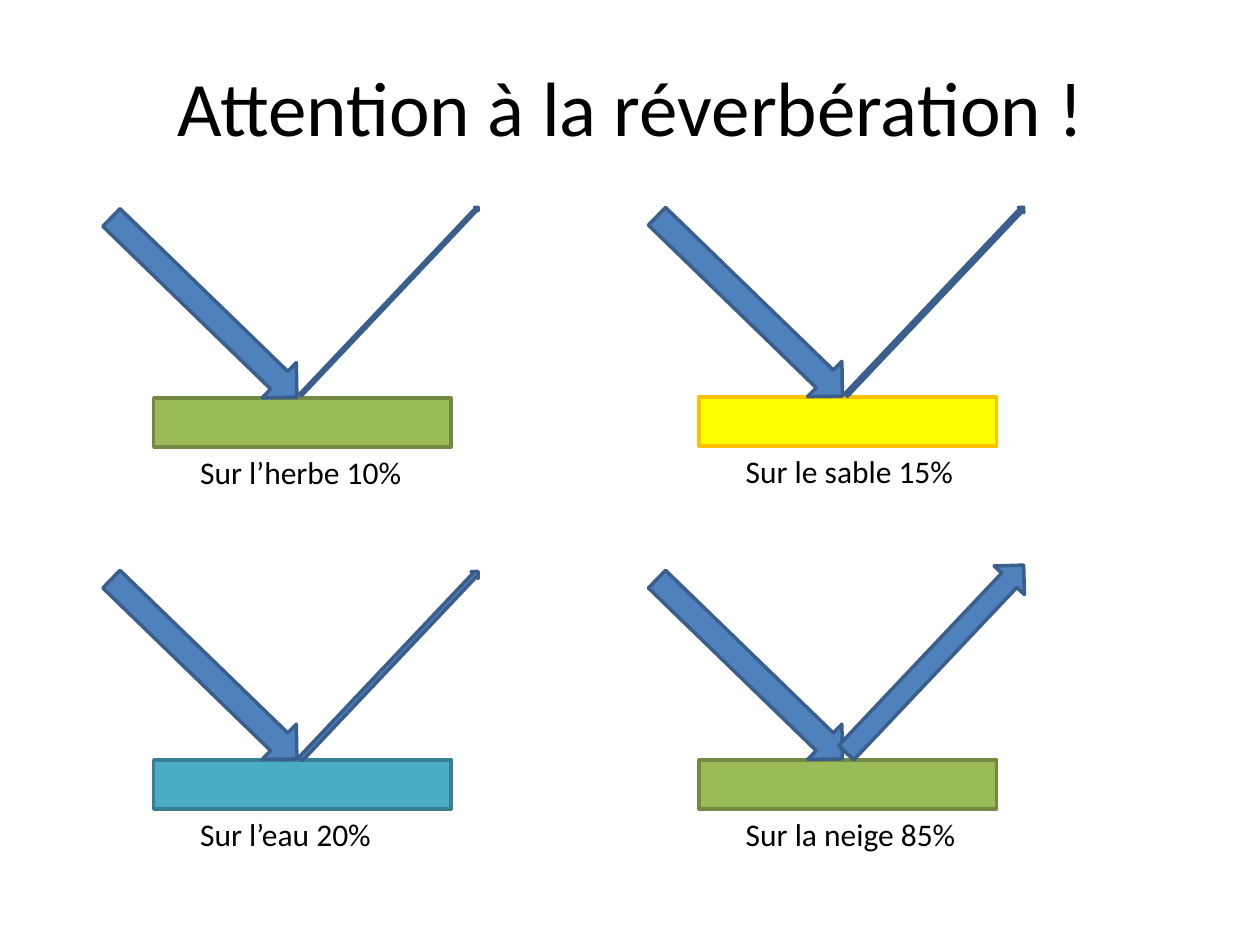
from pptx import Presentation
from pptx.dml.color import RGBColor
from pptx.enum.shapes import MSO_SHAPE as SHAPE
from pptx.enum.text import MSO_ANCHOR, MSO_AUTO_SIZE, PP_ALIGN
from pptx.util import Inches, Pt

TITLE = "Attention à la réverbération !"
FONT = "Calibri"
COLORS = {
    "text": "000000",
    "ray": "4F81BD", "ray_line": "3A5F8C",
    "green": "9BBB59", "green_line": "738A42",
    "yellow": "FFFF00", "yellow_line": "FFC000",
    "blue": "4BACC6", "blue_line": "377F92",
}

# name, reflected percent, ground colour, ground left and top,
# height of the reflected ray's centre above the ground, label width
SURFACES = [
    ("l’herbe", 10, "green", 1.22, 3.16, 0.77, 1.82),
    ("le sable", 15, "yellow", 5.55, 3.15, 0.76, 1.87),
    ("l’eau", 20, "blue", 1.22, 6.03, 0.75, 1.57),
    ("la neige", 85, "green", 5.55, 6.03, 0.8, 1.89),
]
GROUND_W, BAR_H = 2.36, 0.39
RAY_LENGTH = 2.05
INCOMING_X, REFLECTED_X = 0.4, 1.87  # ray centres from the ground's left
INCOMING_LIFT = 0.72
INCOMING_ANGLE, REFLECTED_ANGLE = 44.1, 313.4


def rgb(name):
    return RGBColor.from_string(COLORS[name])


def add_shape(slide, kind, color, x, y, w, h):
    s = slide.shapes.add_shape(kind, Inches(x), Inches(y), Inches(w), Inches(h))
    s.shadow.inherit = False
    s.fill.solid()
    s.fill.fore_color.rgb = rgb(color)
    s.line.color.rgb = rgb(color + "_line")
    s.line.width = Pt(2)
    return s


def add_ray(slide, center_x, center_y, thickness, angle):
    s = add_shape(slide, SHAPE.RIGHT_ARROW, "ray", center_x - RAY_LENGTH / 2,
                  center_y - thickness / 2, RAY_LENGTH, thickness)
    s.rotation = angle


def add_text(slide, text, size, x, y, w, h):
    tf = slide.shapes.add_textbox(
        Inches(x), Inches(y), Inches(w), Inches(h)).text_frame
    tf.text = text
    font = tf.paragraphs[0].runs[0].font
    font.name, font.size = FONT, Pt(size)
    font.color.rgb = rgb("text")
    return tf


def main():
    prs = Presentation()
    prs.slide_width, prs.slide_height = Inches(10), Inches(7.5)
    slide = prs.slides.add_slide(prs.slide_layouts[6])

    # Title
    tf = add_text(slide, TITLE, 44, 0.51, 0.21, 9, 1.25)
    tf.word_wrap = True
    tf.vertical_anchor = MSO_ANCHOR.MIDDLE
    tf.paragraphs[0].alignment = PP_ALIGN.CENTER

    # One diagram per surface; the reflected ray is as thick as its percentage
    for name, percent, color, x, y, lift, label_w in SURFACES:
        add_shape(slide, SHAPE.RECTANGLE, color, x, y, GROUND_W, BAR_H)
        add_ray(slide, x + INCOMING_X, y - INCOMING_LIFT, BAR_H, INCOMING_ANGLE)
        add_ray(slide, x + REFLECTED_X, y - lift, BAR_H * percent / 100,
                REFLECTED_ANGLE)
        tf = add_text(slide, f"Sur {name} {percent}%", 18,
                      x + 0.27, y + BAR_H, label_w, 0.4)
        tf.word_wrap = False
        tf.auto_size = MSO_AUTO_SIZE.SHAPE_TO_FIT_TEXT

    prs.save("out.pptx")


if __name__ == "__main__":
    main()
